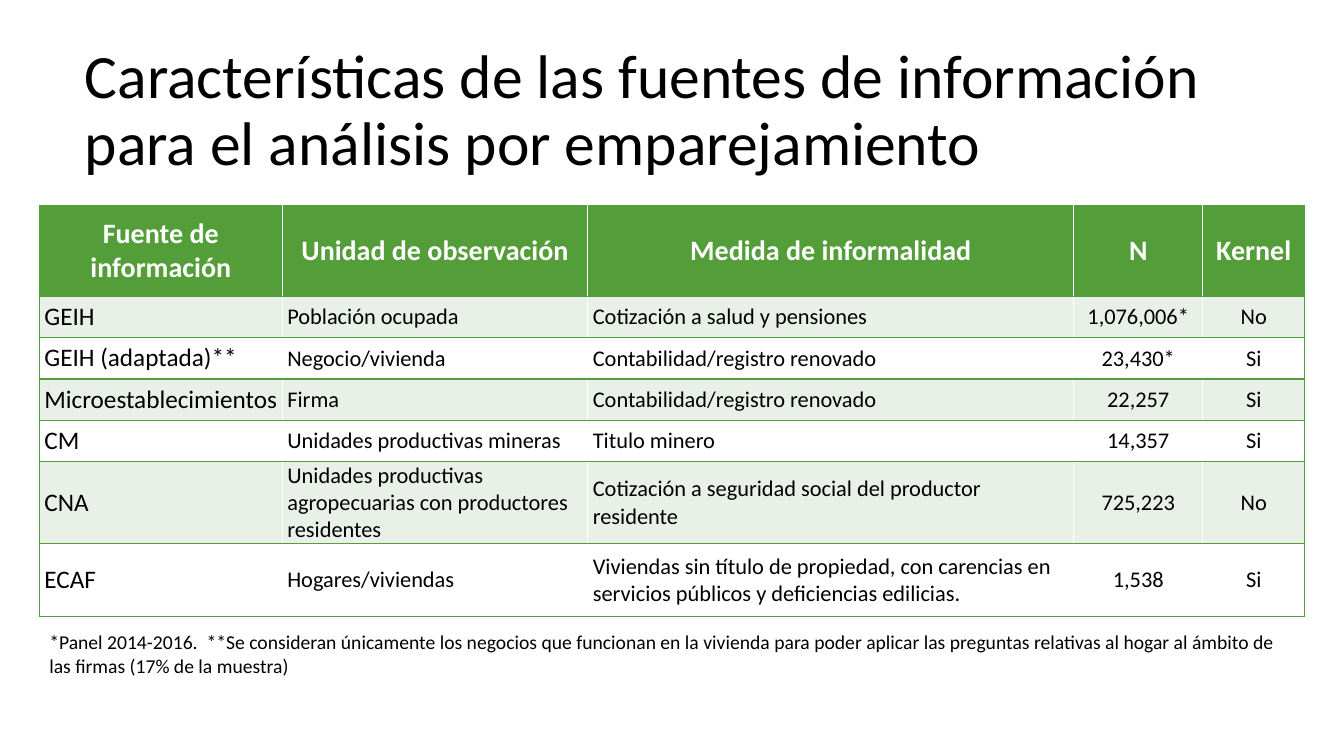
from lxml import etree
from pptx import Presentation
from pptx import util as u
from pptx.dml.color import RGBColor
from pptx.enum import text
from pptx.oxml import ns

COLORS = {"green": "549E39", "band": "E9F0E8", "white": "FFFFFF", "black": "000000"}
LEFT, WIDTH = 0.39, 12.55
COLUMN_WIDTHS = [2.41, 3.03, 4.82, 1.28, 1.01]
ROW_HEIGHTS = [0.9, 0.41, 0.41, 0.41, 0.41, 0.72, 0.72]
SOURCES = [
    ["Fuente de información", "Unidad de observación", "Medida de informalidad", "N", "Kernel"],
    ["GEIH", "Población ocupada", "Cotización a salud y pensiones", "1,076,006*", "No"],
    ["GEIH (adaptada)**", "Negocio/vivienda", "Contabilidad/registro renovado", "23,430*", "Si"],
    ["Microestablecimientos", "Firma", "Contabilidad/registro renovado", "22,257", "Si"],
    ["CM", "Unidades productivas mineras", "Titulo minero", "14,357", "Si"],
    ["CNA", "Unidades productivas agropecuarias con productores residentes",
     "Cotización a seguridad social del productor residente", "725,223", "No"],
    ["ECAF", "Hogares/viviendas",
     "Viviendas sin título de propiedad, con carencias en servicios públicos "
     "y deficiencias edilicias.", "1,538", "Si"],
]


class SlideBuilder:
    def __init__(self, page, font="Calibri"):
        self.page = page
        self.font = font

    def set_text(self, frame, words, size, color="black", bold=False, centred=False):
        frame.word_wrap = True
        para = frame.paragraphs[0]
        para.text = words
        para.alignment = text.PP_ALIGN.CENTER if centred else text.PP_ALIGN.LEFT
        para.font.name = self.font
        para.font.size = u.Pt(size)
        para.font.bold = bold
        para.font.color.rgb = RGBColor.from_string(COLORS[color])
        return para

    def title(self, words, left, top, width, height):
        box = self.page.shapes.title
        box.left, box.top = u.Inches(left), u.Inches(top)
        box.width, box.height = u.Inches(width), u.Inches(height)
        frame = box.text_frame
        frame.auto_size = text.MSO_AUTO_SIZE.NONE
        frame.vertical_anchor = text.MSO_ANCHOR.MIDDLE
        self.set_text(frame, words, 44).line_spacing = 0.9

    def note(self, words, left, top, width, height):
        box = self.page.shapes.add_textbox(
            u.Inches(left), u.Inches(top), u.Inches(width), u.Inches(height))
        self.set_text(box.text_frame, words, 14)

    def border(self, cell, sides):
        properties = cell._tc.get_or_add_tcPr()
        for position, side in enumerate(sides):
            line = etree.Element(ns.qn(f"a:ln{side}"), w=str(u.Pt(1)))
            fill = etree.SubElement(line, ns.qn("a:solidFill"))
            etree.SubElement(fill, ns.qn("a:srgbClr"), val=COLORS["green"])
            properties.insert(position, line)

    def cell(self, cell, words, row, column):
        header = row == 0
        cell.margin_left = cell.margin_right = u.Inches(0.05)
        cell.margin_top = cell.margin_bottom = 0
        cell.vertical_anchor = text.MSO_ANCHOR.MIDDLE
        cell.fill.solid()
        fill = "green" if header else "band" if row % 2 else "white"
        cell.fill.fore_color.rgb = RGBColor.from_string(COLORS[fill])
        size = 20 if header else 18 if column == 0 else 16
        self.set_text(cell.text_frame, words, size, "white" if header else "black",
                      bold=header, centred=header or column >= 3)
        # Outer sides only at the table edges, rules above and below every row
        left = "L" if column == 0 else ""
        right = "R" if column == len(COLUMN_WIDTHS) - 1 else ""
        self.border(cell, left + right + "TB")

    def table(self, rows, left, top):
        table = self.page.shapes.add_table(
            len(rows), len(COLUMN_WIDTHS), u.Inches(left), u.Inches(top),
            u.Inches(sum(COLUMN_WIDTHS)), u.Inches(sum(ROW_HEIGHTS))).table
        for column, width in zip(table.columns, COLUMN_WIDTHS):
            column.width = u.Inches(width)
        for row, height in zip(table.rows, ROW_HEIGHTS):
            row.height = u.Inches(height)
        for row, entries in enumerate(rows):
            for column, words in enumerate(entries):
                self.cell(table.cell(row, column), words, row, column)


def main():
    deck = Presentation()
    deck.slide_width, deck.slide_height = u.Inches(13.33), u.Inches(7.5)
    builder = SlideBuilder(deck.slides.add_slide(deck.slide_layouts[5]))

    # Title
    builder.title("Características de las fuentes de información "
                  "para el análisis por emparejamiento", 0.74, 0.39, 11.85, 1.44)
    # Table of sources
    builder.table(SOURCES, LEFT, 2.04)
    # Footnote
    builder.note("*Panel 2014-2016.  **Se consideran únicamente los negocios que funcionan "
                 "en la vivienda para poder aplicar las preguntas relativas al hogar "
                 "al ámbito de las firmas (17% de la muestra)", LEFT, 6.2, WIDTH, 0.81)
    deck.save("out.pptx")


if __name__ == "__main__":
    main()
